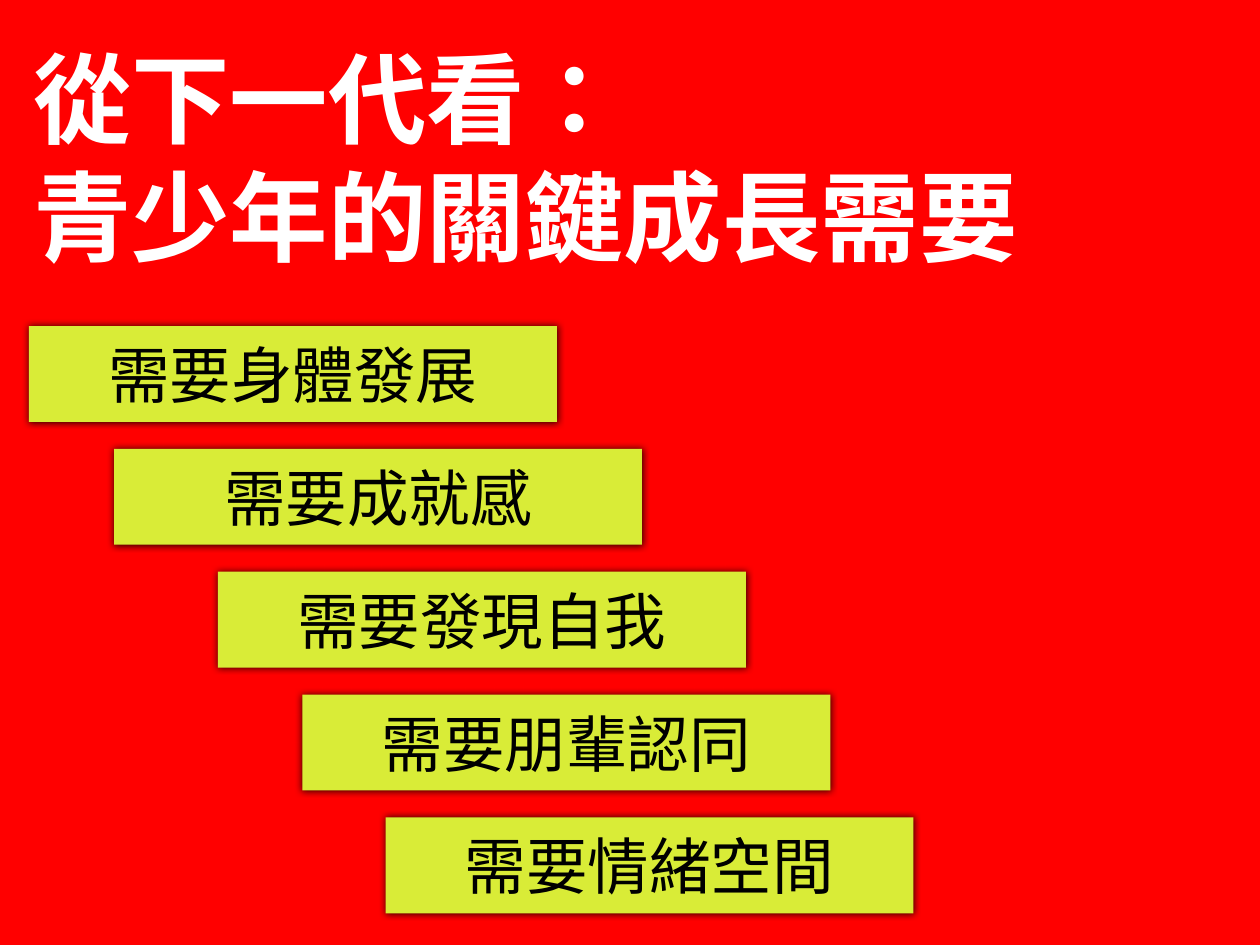
"""Build a slide on the key growth needs of young people."""
import dataclasses

import lxml.etree
import pptx
import pptx.dml.color
import pptx.enum.lang
import pptx.enum.shapes
import pptx.enum.text
import pptx.oxml
import pptx.oxml.ns
import pptx.shapes.autoshape
import pptx.text.text
import pptx.util

RED = pptx.dml.color.RGBColor(0xFF, 0x00, 0x00)
LIME = pptx.dml.color.RGBColor(0xD9, 0xEC, 0x37)
WHITE = pptx.dml.color.RGBColor(0xFF, 0xFF, 0xFF)
BLACK = pptx.dml.color.RGBColor(0x00, 0x00, 0x00)

SLIDE_WIDTH = pptx.util.Inches(14.22)
SLIDE_HEIGHT = pptx.util.Inches(10.67)
COLUMN = SLIDE_WIDTH / 100
ROW = SLIDE_HEIGHT / 100

FIRST_NEED_ROW = 34.5
NEED_ROW_STEP = 13
NEED_COLUMNS = 41.9
NEED_ROWS = 10.15
INSET = pptx.util.Inches(0.06)

TITLE_LINES = ["從下一代看：", "青少年的關鍵成長需要"]
SHADOW = (
    f'<a:effectLst {pptx.oxml.ns.nsdecls("a")}>'
    '<a:outerShdw blurRad="76200" dist="0" dir="18900000" rotWithShape="0">'
    '<a:srgbClr val="000000"><a:alpha val="80000"/></a:srgbClr>'
    "</a:outerShdw></a:effectLst>"
)


@dataclasses.dataclass(frozen=True)
class Need:
    text: str
    column: float


NEEDS = [
    Need("需要身體發展", 2.3),
    Need("需要成就感", 9.05),
    Need("需要發現自我", 17.3),
    Need("需要朋輩認同", 24),
    Need("需要情緒空間", 30.6),
]


def place(
    shape: pptx.shapes.autoshape.Shape,
    column: float,
    row: float,
    columns: float,
    rows: float,
) -> None:
    """Position a shape on the hundred-part slide grid."""
    shape.left, shape.width = round(column * COLUMN), round(columns * COLUMN)
    shape.top, shape.height = round(row * ROW), round(rows * ROW)


def write_text(
    frame: pptx.text.text.TextFrame,
    lines: list[str],
    *,
    font: str,
    size: float,
    color: pptx.dml.color.RGBColor,
    bold: bool = False,
    alignment: pptx.enum.text.PP_ALIGN = pptx.enum.text.PP_ALIGN.LEFT,
) -> None:
    """Fill a text frame with one formatted paragraph per line."""
    frame.word_wrap = True
    frame.auto_size = pptx.enum.text.MSO_AUTO_SIZE.NONE
    frame.vertical_anchor = pptx.enum.text.MSO_ANCHOR.MIDDLE
    frame.margin_left = frame.margin_right = INSET
    frame.margin_top = frame.margin_bottom = INSET
    frame.text = "\n".join(lines)
    for paragraph in frame.paragraphs:
        paragraph.alignment = alignment
        for run in paragraph.runs:
            run.font.name = font
            run.font.size = pptx.util.Pt(size)
            run.font.bold = bold
            run.font.color.rgb = color
            run.font.language_id = pptx.enum.lang.MSO_LANGUAGE_ID.TRADITIONAL_CHINESE
            lxml.etree.SubElement(
                run._r.get_or_add_rPr(), pptx.oxml.ns.qn("a:ea"), typeface=font
            )


def add_need(slide: pptx.slide.Slide, need: Need, row: float) -> None:
    """Draw one shadowed need box."""
    shape = slide.shapes.add_shape(
        pptx.enum.shapes.MSO_SHAPE.RECTANGLE, 0, 0, 0, 0
    )
    place(shape, need.column, row, NEED_COLUMNS, NEED_ROWS)
    shape.fill.solid()
    shape.fill.fore_color.rgb = LIME
    shape.line.fill.background()
    shape._element.spPr.append(pptx.oxml.parse_xml(SHADOW))
    write_text(
        shape.text_frame,
        [need.text],
        font="Noto Sans CJK SC",
        size=50,
        color=BLACK,
        alignment=pptx.enum.text.PP_ALIGN.CENTER,
    )


def main() -> None:
    """Build and save the presentation."""
    presentation = pptx.Presentation()
    presentation.slide_width = SLIDE_WIDTH
    presentation.slide_height = SLIDE_HEIGHT
    slide = presentation.slides.add_slide(presentation.slide_layouts[5])
    slide.background.fill.solid()
    slide.background.fill.fore_color.rgb = RED

    title = slide.shapes.title
    place(title, 2.2, 1.4, 95.7, 30.2)
    write_text(
        title.text_frame, TITLE_LINES, font="Arial", size=80, color=WHITE, bold=True
    )
    for index, need in enumerate(NEEDS):
        add_need(slide, need, FIRST_NEED_ROW + index * NEED_ROW_STEP)
    presentation.save("out.pptx")


if __name__ == "__main__":
    main()
